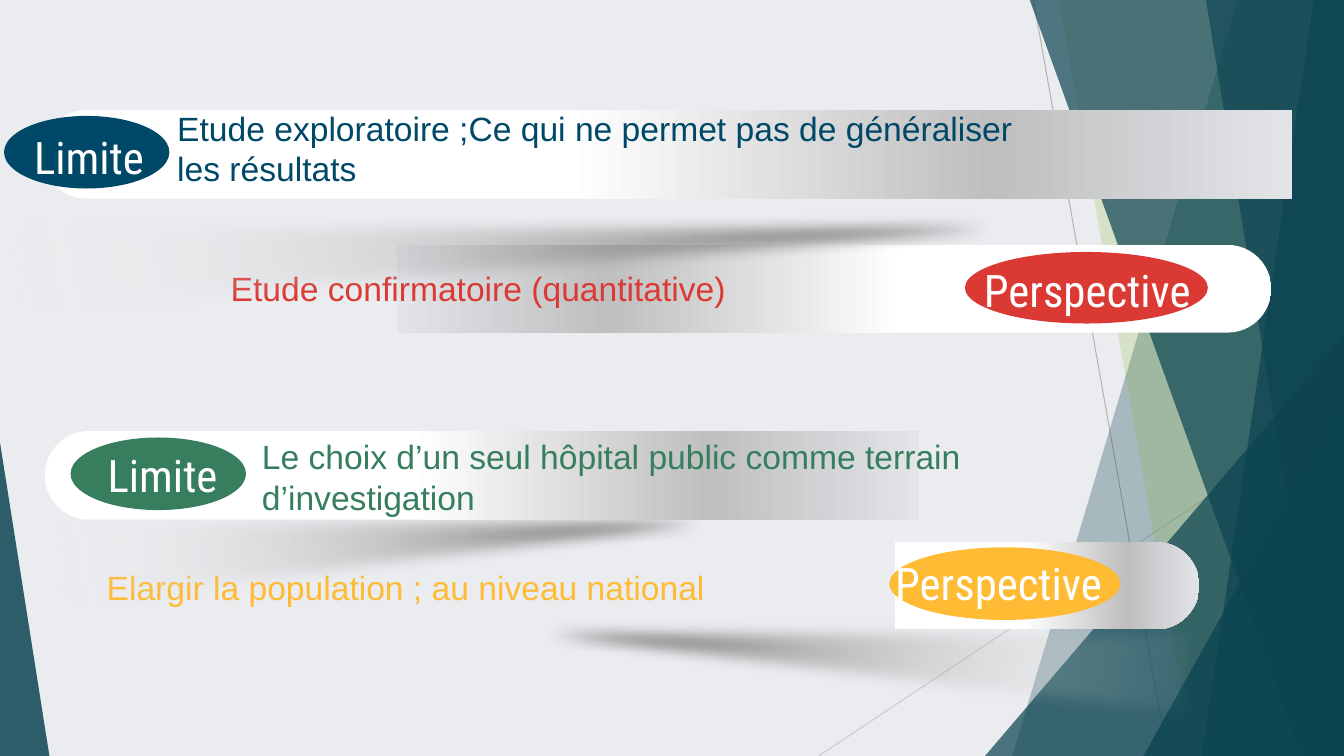
"""Build a slide that pairs each limit of a study with its perspective."""
from lxml import etree
from pptx import Presentation
from pptx.dml.color import RGBColor
from pptx.enum.shapes import MSO_CONNECTOR as CONNECTOR, MSO_SHAPE as SHAPE
from pptx.oxml import parse_xml
from pptx.oxml.ns import nsdecls, qn
from pptx.util import Inches, Pt

TEAL, GREEN, SLATE, WHITE = "084450", "90C226", "3C4D67", "FFFFFF"
TOP, RIGHT, BOTTOM = -0.01, 13.33, 7.5
GUIDES = [((10.25, 0), (11.58, 7.5), "BFBFBF"), ((13.33, 4.03), (8.12, 7.5), "D9D9D9")]
FACETS = [
    ("band", (12.28, 10.04), TEAL, 30),
    ("band", (10.5, 11.83), GREEN, 20),
    ("triangle", (9.77, 3.33, 3.56, 4.17, 1), TEAL, 72),
    ("band", (10.21, 12.91), TEAL, 70),
    ("band", (13.03, 11.92), TEAL, 70),
    ("band", (11.96, 13.18), TEAL, 65),
    ("triangle", (11.34, 3.93, 1.99, 3.57, 1), TEAL, 80),
    ("triangle", (0, 4.39, 0.49, 3.11, 0), TEAL, 85),
]
BAR_STOPS = [(0.42, "FFFFFF", 100), (0.76, "BFBFBF", 100), (1, "E2E4E8", 100)]
SHADOW_STOPS = [(0, "FFFFFF", 0), (0.93, "000000", 100)]
ROWS = [
    dict(color="FFBB33", shadow=(3.24, 6.17, 8.67, 1.06), mirrored=True,
         bar=(9.95, 4.3, 0.87, 3.02), turn=90, angle=270,
         badge=(8.82, 5.43, 2.29, 0.72), label="Perspective", label_box=(8.78, 5.46, 2.91, 0.64),
         lines=["Elargir la population ; au niveau national"], text_box=(0.96, 5.57, 7.02, 0.91)),
    dict(color="DB3A34", shadow=None, mirrored=False,
         bar=(7.84, -1.47, 0.87, 8.67), turn=90, angle=90,
         badge=(9.57, 2.5, 2.41, 0.71), label="Perspective", label_box=(9.66, 2.56, 2.4, 0.64),
         lines=["Etude confirmatoire (quantitative)"], text_box=(2.19, 2.61, 6.02, 0.91)),
    dict(color="004868", shadow=(0, 2.14, 13.02, 1.06), mirrored=False,
         bar=(6.18, -4.67, 0.88, 12.4), turn=270, angle=90,
         badge=(0.04, 1.15, 1.64, 0.72), label="Limite", label_box=(0.24, 1.24, 1.49, 0.64),
         lines=["Etude exploratoire ;Ce qui ne permet pas de généraliser", "les résultats"],
         text_box=(1.66, 1.02, 9.5, 1.31)),
    dict(color="367E5D", shadow=(0.44, 5.07, 8.67, 1.06), mirrored=False,
         bar=(4.34, 0.38, 0.88, 8.67), turn=270, angle=90,
         badge=(0.7, 4.34, 1.74, 0.72), label="Limite", label_box=(0.97, 4.39, 1.33, 0.64),
         lines=["Le choix d’un seul hôpital public comme terrain", "d’investigation"],
         text_box=(2.5, 4.28, 8.2, 1.31)),
]


def rgb(color):
    return RGBColor.from_string(color)


def inches(values):
    return [Inches(value) for value in values]


def paint(shape, color, opacity=100):
    shape.shadow.inherit = False
    shape.line.fill.background()
    shape.fill.solid()
    shape.fill.fore_color.rgb = rgb(color)
    if opacity < 100:
        tone = shape.fill._xPr.find(qn("a:solidFill"))[0]
        etree.SubElement(tone, qn("a:alpha")).set("val", str(opacity * 1000))


def add_shape(page, kind, box, color=WHITE, opacity=100):
    shape = page.shapes.add_shape(kind, *inches(box))
    paint(shape, color, opacity)
    return shape


def blend(shape, stops, angle):
    marks = "".join(
        f'<a:gs pos="{round(place * 100000)}"><a:srgbClr val="{color}">'
        f'<a:alpha val="{opacity * 1000}"/></a:srgbClr></a:gs>'
        for place, color, opacity in stops)
    gradient = parse_xml(
        f'<a:gradFill {nsdecls("a")} rotWithShape="1"><a:gsLst>{marks}</a:gsLst>'
        f'<a:lin ang="{angle * 60000}" scaled="0"/></a:gradFill>')
    properties = shape._element.spPr
    properties.replace(properties.find(qn("a:solidFill")), gradient)


def add_band(page, top_x, bottom_x, color, opacity):
    builder = page.shapes.build_freeform(Inches(top_x), Inches(TOP))
    corners = [(RIGHT, TOP), (RIGHT, BOTTOM), (bottom_x, BOTTOM)]
    builder.add_line_segments([inches(corner) for corner in corners], close=True)
    paint(builder.convert_to_shape(), color, opacity)


def add_guide(page, start, end, color):
    guide = page.shapes.add_connector(CONNECTOR.STRAIGHT, *inches(start + end))
    guide.line.color.rgb = rgb(color)
    guide.line.width = Pt(0.75)
    etree.SubElement(guide._element.spPr, qn("a:effectLst"))


def add_shadow(page, box, mirrored):
    shadow = add_shape(page, SHAPE.RIGHT_TRIANGLE, box)
    blend(shadow, SHADOW_STOPS, 10)
    properties = shadow._element.spPr
    properties.xfrm.set("flipV", "1")
    if mirrored:
        properties.xfrm.set("flipH", "1")
    effects = properties.find(qn("a:effectLst"))
    etree.SubElement(effects, qn("a:softEdge")).set("rad", str(Inches(0.14)))


def add_bar(page, box, turn, angle):
    bar = add_shape(page, SHAPE.ROUND_2_SAME_RECTANGLE, box)
    bar.adjustments[0], bar.adjustments[1] = 0.5, 0
    bar.rotation = turn
    blend(bar, BAR_STOPS, angle)


def add_text(page, lines, box, *, size, font, color):
    frame = page.shapes.add_textbox(*inches(box)).text_frame
    frame.word_wrap = True
    for index, line in enumerate(lines):
        para = frame.add_paragraph() if index else frame.paragraphs[0]
        span = para.add_run()
        span.text = line
        span.font.size = Pt(size)
        span.font.name = font
        span.font.color.rgb = rgb(color)


def add_row(page, row):
    if row["shadow"]:
        add_shadow(page, row["shadow"], row["mirrored"])
    add_bar(page, row["bar"], row["turn"], row["angle"])
    add_shape(page, SHAPE.OVAL, row["badge"], row["color"])
    add_text(page, [row["label"]], row["label_box"], size=32, font="Roboto Condensed", color=WHITE)
    add_text(page, row["lines"], row["text_box"], size=24, font="Arial", color=row["color"])


def main():
    deck = Presentation()
    deck.slide_width, deck.slide_height = Inches(RIGHT), Inches(BOTTOM)
    page = deck.slides.add_slide(deck.slide_layouts[6])
    for guide in GUIDES:
        add_guide(page, *guide)
    for kind, place, color, opacity in FACETS:
        if kind == "band":
            add_band(page, *place, color, opacity)
        else:
            *box, apex = place
            facet = add_shape(page, SHAPE.ISOSCELES_TRIANGLE, box, color, opacity)
            facet.adjustments[0] = apex
    add_shape(page, SHAPE.RECTANGLE, (0, -0.16, RIGHT, 8.05), SLATE, 10)
    for row in ROWS:
        add_row(page, row)
    deck.save("out.pptx")


if __name__ == "__main__":
    main()
